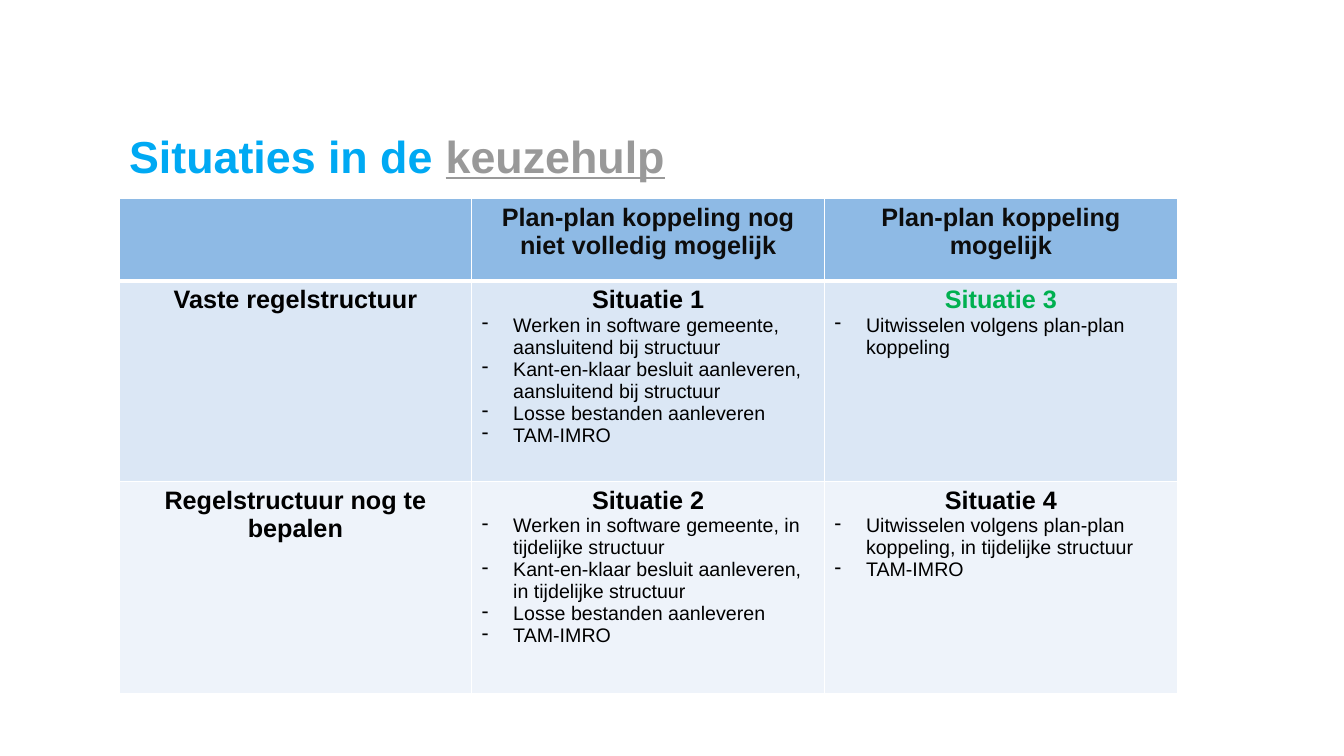
from lxml.etree import SubElement
from pptx import Presentation
from pptx.dml.color import RGBColor as RGB
from pptx.enum.text import MSO_ANCHOR as ANCHOR, PP_ALIGN as ALIGN
from pptx.oxml.ns import qn
from pptx.util import Cm, Pt

# Colours
BLUE = RGB(0x00, 0xA9, 0xF3)
GREY = RGB(0x99, 0x99, 0x99)
DARK = RGB(0x0D, 0x0D, 0x0D)
BLACK = RGB(0x00, 0x00, 0x00)
GREEN = RGB(0x00, 0xB0, 0x50)
WHITE = RGB(0xFF, 0xFF, 0xFF)
FILLS = [RGB(0x8E, 0xBA, 0xE5), RGB(0xDB, 0xE7, 0xF5), RGB(0xEE, 0xF3, 0xFA)]

# Content: each cell is (heading, heading colour, points)
TITLE = [("Situaties in de ", BLUE, False), ("keuzehulp", GREY, True)]
ROWS = [
    [
        ("", DARK, []),
        ("Plan-plan koppeling nog niet volledig mogelijk", DARK, []),
        ("Plan-plan koppeling mogelijk", DARK, []),
    ],
    [
        ("Vaste regelstructuur", BLACK, []),
        ("Situatie 1", BLACK, [
            "Werken in software gemeente, aansluitend bij structuur",
            "Kant-en-klaar besluit aanleveren, aansluitend bij structuur",
            "Losse bestanden aanleveren",
            "TAM-IMRO",
        ]),
        ("Situatie 3", GREEN, ["Uitwisselen volgens plan-plan koppeling"]),
    ],
    [
        ("Regelstructuur nog te bepalen", BLACK, []),
        ("Situatie 2", BLACK, [
            "Werken in software gemeente, in tijdelijke structuur",
            "Kant-en-klaar besluit aanleveren, in tijdelijke structuur",
            "Losse bestanden aanleveren",
            "TAM-IMRO",
        ]),
        ("Situatie 4", BLACK, [
            "Uitwisselen volgens plan-plan koppeling, in tijdelijke structuur",
            "TAM-IMRO",
        ]),
    ],
]

# Layout
LEFT, TOP = Cm(3), Cm(5)
WIDTH = Cm(8.89)
HEIGHTS = [Cm(2.08), Cm(5.05), Cm(5.36)]
INDENT = Cm(0.79)


def style(font, size, color, bold):
    font.name = "Arial"
    font.size = Pt(size)
    font.bold = bold
    font.color.rgb = color


def dash(para):
    props = para._p.get_or_add_pPr()
    props.set("marL", str(INDENT))
    props.set("indent", str(-INDENT))
    SubElement(props, qn("a:buFontTx"))
    SubElement(props, qn("a:buChar"), char="-")


def edge(cell, widths):
    props = cell._tc.get_or_add_tcPr()
    for i, (side, width) in enumerate(widths.items()):
        line = SubElement(props, qn("a:ln" + side), w=str(Pt(width)))
        fill = SubElement(line, qn("a:solidFill"))
        SubElement(fill, qn("a:srgbClr"), val=str(WHITE))
        props.insert(i, line)


def fill_cell(cell, head, color, points):
    frame = cell.text_frame
    para = frame.paragraphs[0]
    para.text = head
    para.alignment = ALIGN.CENTER
    style(para.font, 18, color, True)
    for point in points:
        para = frame.add_paragraph()
        para.text = point
        style(para.font, 14, BLACK, False)
        dash(para)


deck = Presentation()
deck.slide_width, deck.slide_height = Cm(33.87), Cm(19.05)
slide = deck.slides.add_slide(deck.slide_layouts[5])

# Title
title = slide.shapes.title
title.left, title.top, title.width, title.height = LEFT, Cm(3), Cm(27.86), Cm(2)
title.text_frame.vertical_anchor = ANCHOR.MIDDLE
para = title.text_frame.paragraphs[0]
para.alignment = ALIGN.LEFT
para.line_spacing = 0.9
for text, color, under in TITLE:
    run = para.add_run()
    run.text = text
    style(run.font, 32, color, True)
    run.font.underline = under

# Table
size = len(ROWS[0])
table = slide.shapes.add_table(
    len(ROWS), size, LEFT, TOP, WIDTH * size, sum(HEIGHTS)).table
table.horz_banding = False
for col in table.columns:
    col.width = WIDTH
for r, row in enumerate(ROWS):
    table.rows[r].height = HEIGHTS[r]
    for c, (head, color, points) in enumerate(row):
        cell = table.cell(r, c)
        fill_cell(cell, head, color, points)
        cell.fill.solid()
        cell.fill.fore_color.rgb = FILLS[r]
        edge(cell, {"L": 1, "R": 1, "T": 3 if r == 1 else 1,
                    "B": 3 if r == 0 else 1})

deck.save("out.pptx")
